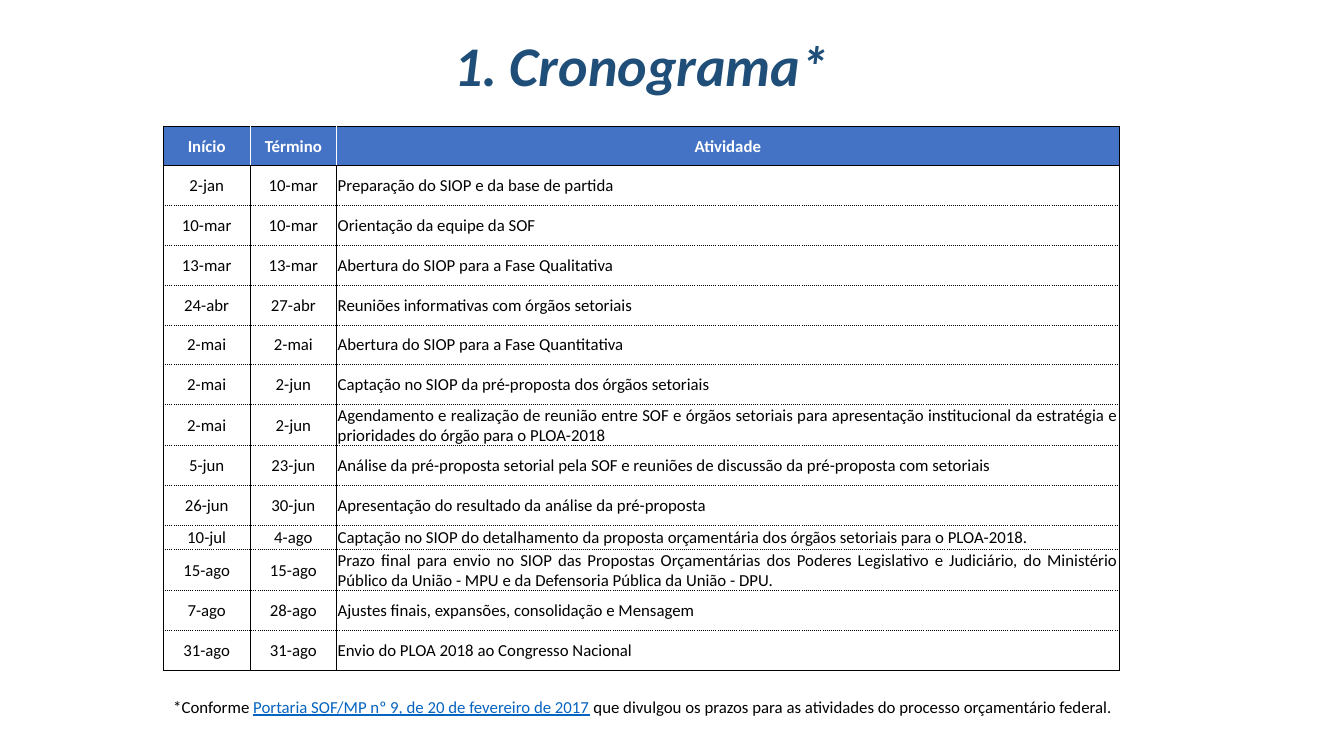
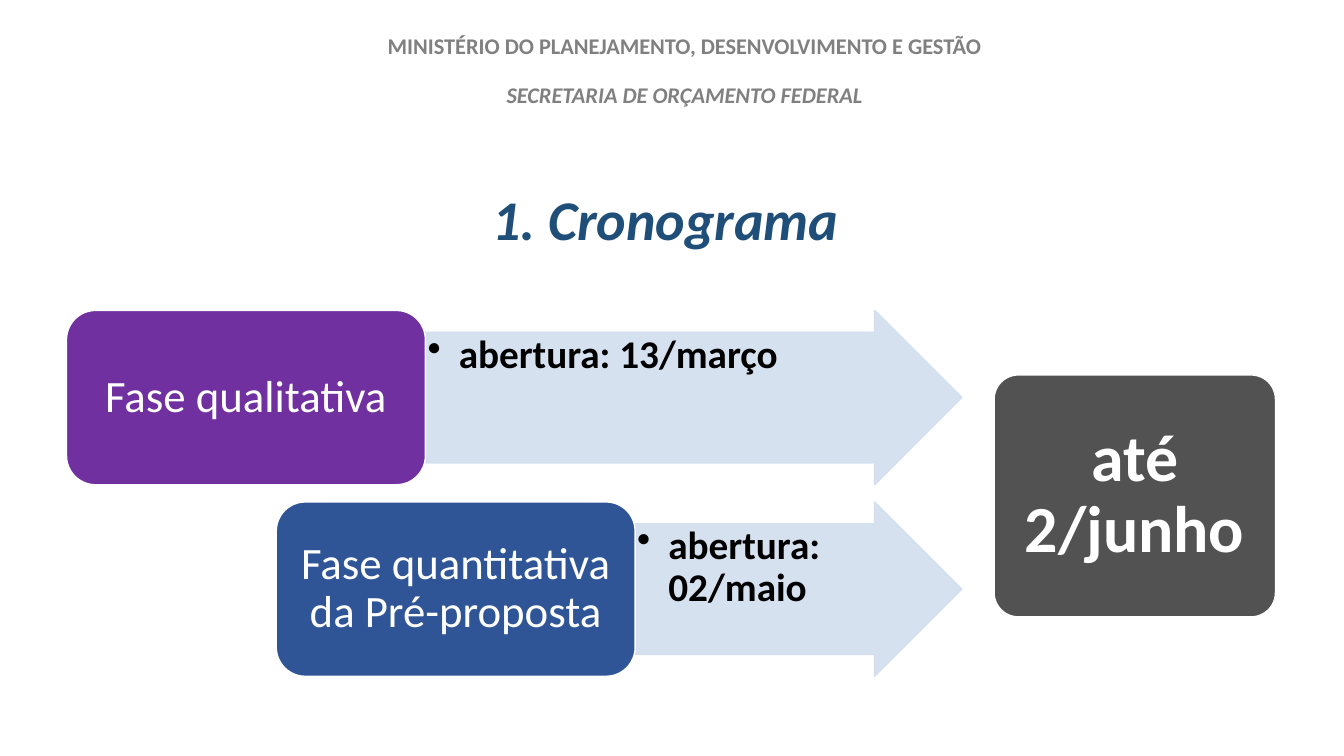
from dataclasses import dataclass
from typing import NamedTuple

from lxml.etree import SubElement
from pptx import Presentation
from pptx.dml.color import RGBColor
from pptx.enum.shapes import MSO_SHAPE
from pptx.enum.text import MSO_ANCHOR, PP_ALIGN
from pptx.oxml import parse_xml
from pptx.oxml.ns import nsdecls, qn
from pptx.util import Inches, Pt


@dataclass(frozen=True)
class Theme:
    font: str = "Calibri"
    title: str = "1F4E79"
    ministry: str = "808080"
    header: str = "4472C4"
    link: str = "0563C1"
    arrow: str = "D2DEEF"
    qualitative: str = "7030A0"
    quantitative: str = "2F5597"
    deadline: str = "525252"
    black: str = "000000"
    white: str = "FFFFFF"
    title_size: int = 40
    ministry_size: int = 16
    small_size: int = 12
    opening_size: int = 28
    phase_size: int = 32
    deadline_size: int = 47


THEME = Theme()


class Area(NamedTuple):
    left: float
    top: float
    width: float
    height: float

    def lengths(self) -> list:
        return [Inches(value) for value in self]


class TextStyle(NamedTuple):
    size: int
    color: str
    bold: bool = False
    italic: bool = False
    align: PP_ALIGN = PP_ALIGN.CENTER
    line_spacing: float = 0.9


class Margins(NamedTuple):
    left: float
    top: float
    right: float
    bottom: float


class Activity(NamedTuple):
    start: str
    end: str
    name: str
    height: float | None = None


class Phase(NamedTuple):
    name: str
    opening: str
    left: float
    top: float
    color: str


class Border(NamedTuple):
    color: str = THEME.black
    width: float = 0.5
    dash: str = "solid"


TITLE = TextStyle(THEME.title_size, THEME.title, bold=True, italic=True)
MINISTRY = TextStyle(THEME.ministry_size, THEME.ministry, bold=True)
HEADER = TextStyle(THEME.small_size, THEME.white, bold=True, line_spacing=1)
DATE = TextStyle(THEME.small_size, THEME.black, line_spacing=1)
ACTIVITY = DATE._replace(align=PP_ALIGN.JUSTIFY)
FOOTNOTE = DATE._replace(align=PP_ALIGN.LEFT)
OPENING = TextStyle(THEME.opening_size, THEME.black, bold=True, align=PP_ALIGN.LEFT)
PHASE = TextStyle(THEME.phase_size, THEME.white)
DEADLINE = TextStyle(THEME.deadline_size, THEME.white, bold=True)

LINE = Border()
DIVIDER = Border(THEME.white)
DOTS = Border(dash="dot")
LAST_LINE = Border(width=1)

TABLE_AREA = Area(1.62, 1.25, 9.48, 5.4)
COLUMN_WIDTHS = (0.86, 0.86, 7.76)
HEADINGS = ("Início", "Término", "Atividade")
TWO_LINES = 0.41
ACTIVITIES = (
    Activity("2-jan", "10-mar", "Preparação do SIOP e da base de partida"),
    Activity("10-mar", "10-mar", "Orientação da equipe da SOF"),
    Activity("13-mar", "13-mar", "Abertura do SIOP para a Fase Qualitativa"),
    Activity("24-abr", "27-abr", "Reuniões informativas com órgãos setoriais"),
    Activity("2-mai", "2-mai", "Abertura do SIOP para a Fase Quantitativa"),
    Activity("2-mai", "2-jun", "Captação no SIOP da pré-proposta dos órgãos setoriais"),
    Activity("2-mai", "2-jun", "Agendamento e realização de reunião entre SOF e órgãos setoriais para "
             "apresentação institucional da estratégia e prioridades do órgão para o PLOA-2018", TWO_LINES),
    Activity("5-jun", "23-jun", "Análise da pré-proposta setorial pela SOF e reuniões de discussão "
             "da pré-proposta com setoriais"),
    Activity("26-jun", "30-jun", "Apresentação do resultado da análise da pré-proposta"),
    Activity("10-jul", "4-ago", "Captação no SIOP do detalhamento da proposta orçamentária dos órgãos "
             "setoriais para o PLOA-2018.", 0.24),
    Activity("15-ago", "15-ago", "Prazo final para envio no SIOP das Propostas Orçamentárias dos Poderes "
             "Legislativo e Judiciário, do Ministério Público da União - MPU e da Defensoria Pública "
             "da União - DPU.", TWO_LINES),
    Activity("7-ago", "28-ago", "Ajustes finais, expansões, consolidação e Mensagem"),
    Activity("31-ago", "31-ago", "Envio do PLOA 2018 ao Congresso Nacional"),
)

PHASES = (
    Phase("Fase qualitativa", "abertura: 13/março", 0.66, 3.08, THEME.qualitative),
    Phase("Fase quantitativa da Pré-proposta", "abertura: 02/maio", 2.74, 4.98, THEME.quantitative),
)
PHASE_WIDTH, PHASE_HEIGHT = 3.56, 1.73
ARROW_END = 9.54


def rgb(color: str) -> RGBColor:
    return RGBColor.from_string(color)


def style_para(para, style: TextStyle) -> None:
    para.alignment = style.align
    para.line_spacing = style.line_spacing
    font = para.font
    font.name, font.size = THEME.font, Pt(style.size)
    font.bold, font.italic = style.bold, style.italic
    font.color.rgb = rgb(style.color)


def set_margins(target, margins: Margins) -> None:
    """Set the inner margins of a text frame or a table cell."""
    target.margin_left, target.margin_top = Inches(margins.left), Inches(margins.top)
    target.margin_right, target.margin_bottom = Inches(margins.right), Inches(margins.bottom)


def add_text(page, area: Area, text: str, style: TextStyle, anchor=MSO_ANCHOR.BOTTOM):
    frame = page.shapes.add_textbox(*area.lengths()).text_frame
    frame.word_wrap = True
    frame.vertical_anchor = anchor
    para = frame.paragraphs[0]
    para.text = text
    style_para(para, style)
    return frame


def add_box(page, kind: MSO_SHAPE, area: Area, fill: str, outline: str,
            text: str, style: TextStyle, margins: Margins):
    box = page.shapes.add_shape(kind, *area.lengths())
    box.shadow.inherit = False
    box.fill.solid()
    box.fill.fore_color.rgb = rgb(fill)
    box.line.color.rgb = rgb(outline)
    box.line.width = Pt(1)
    frame = box.text_frame
    frame.word_wrap = True
    frame.vertical_anchor = MSO_ANCHOR.MIDDLE
    set_margins(frame, margins)
    frame.paragraphs[0].text = text
    style_para(frame.paragraphs[0], style)
    return box


def add_bullet(para, indent: float) -> None:
    properties = para._p.get_or_add_pPr()
    properties.set("marL", str(Inches(indent)))
    properties.set("indent", str(-Inches(indent)))
    properties.insert_element_before(
        parse_xml(f'<a:buChar {nsdecls("a")} char="•"/>'), "a:tabLst", "a:defRPr", "a:extLst")


def set_opacity(shape, percent: int) -> None:
    for color in shape._element.spPr.iter(qn("a:srgbClr")):
        SubElement(color, qn("a:alpha"), val=str(percent * 1000))


def set_borders(cell, left: Border, right: Border, top: Border, bottom: Border) -> None:
    properties = cell._tc.get_or_add_tcPr()
    for index, (side, border) in enumerate(zip("LRTB", (left, right, top, bottom))):
        properties.insert(index, parse_xml(
            f'<a:ln{side} {nsdecls("a")} w="{Pt(border.width)}">'
            f'<a:solidFill><a:srgbClr val="{border.color}"/></a:solidFill>'
            f'<a:prstDash val="{border.dash}"/></a:ln{side}>'))


def fill_cell(cell, text: str, style: TextStyle) -> None:
    cell.vertical_anchor = MSO_ANCHOR.MIDDLE
    set_margins(cell, Margins(0.01, 0.01, 0.01, 0))
    para = cell.text_frame.paragraphs[0]
    para.text = text
    style_para(para, style)


def add_schedule(page) -> None:
    table = page.shapes.add_table(
        len(ACTIVITIES) + 1, len(HEADINGS), *TABLE_AREA.lengths()).table
    table.first_row = table.horz_banding = False
    for column, width in zip(table.columns, COLUMN_WIDTHS):
        column.width = Inches(width)

    fixed = [activity.height for activity in ACTIVITIES if activity.height]
    usual_height = (TABLE_AREA.height - sum(fixed)) / (len(ACTIVITIES) + 1 - len(fixed))
    table.rows[0].height = Inches(usual_height)
    last_column = len(HEADINGS) - 1
    for index, heading in enumerate(HEADINGS):
        cell = table.cell(0, index)
        fill_cell(cell, heading, HEADER)
        cell.fill.solid()
        cell.fill.fore_color.rgb = rgb(THEME.header)
        set_borders(cell, DIVIDER if index else LINE,
                    LINE if index == last_column else DIVIDER, LINE, LINE)

    for row, activity in enumerate(ACTIVITIES, start=1):
        table.rows[row].height = Inches(activity.height or usual_height)
        top = LINE if row == 1 else DOTS
        bottom = LAST_LINE if row == len(ACTIVITIES) else DOTS
        for index, text in enumerate((activity.start, activity.end, activity.name)):
            cell = table.cell(row, index)
            fill_cell(cell, text, ACTIVITY if index == last_column else DATE)
            cell.fill.background()
            set_borders(cell, LINE, LINE, top, bottom)


def add_footnote(page) -> None:
    frame = add_text(page, Area(1.62, 6.86, 10.13, 0.3), "*Conforme ", FOOTNOTE, MSO_ANCHOR.TOP)
    para = frame.paragraphs[0]
    reference = para.add_run()
    reference.text = "Portaria SOF/MP nº 9, de 20 de fevereiro de 2017"
    reference.font.underline = True
    reference.font.color.rgb = rgb(THEME.link)
    para.add_run().text = " que divulgou os prazos para as atividades do processo orçamentário federal."


def add_ministry(page) -> None:
    frame = add_text(page, Area(1.79, 0.25, 10, 0.87),
                     "MINISTÉRIO DO PLANEJAMENTO, DESENVOLVIMENTO E GESTÃO", MINISTRY)
    para = frame.add_paragraph()
    para.text = "SECRETARIA DE ORÇAMENTO FEDERAL"
    para.space_before = Pt(17.5)
    style_para(para, MINISTRY._replace(italic=True))


def add_phase(page, phase: Phase) -> None:
    arrow_left = phase.left + PHASE_WIDTH
    arrow = add_box(page, MSO_SHAPE.RIGHT_ARROW,
                    Area(arrow_left, phase.top, ARROW_END - arrow_left, PHASE_HEIGHT),
                    THEME.arrow, THEME.arrow, phase.opening, OPENING, Margins(0.02, 0.02, 0.45, 0.02))
    arrow.adjustments[0] = 0.75
    arrow.text_frame.vertical_anchor = MSO_ANCHOR.TOP
    add_bullet(arrow.text_frame.paragraphs[0], 0.31)
    set_opacity(arrow, 90)
    add_box(page, MSO_SHAPE.ROUNDED_RECTANGLE,
            Area(phase.left, phase.top, PHASE_WIDTH, PHASE_HEIGHT), phase.color, THEME.white,
            phase.name, PHASE, Margins(0.13, 0.07, 0.13, 0.07))


def build_schedule_page(page) -> None:
    add_text(page, Area(2.11, 0, 8.5, 1.03), "1. Cronograma*", TITLE)
    add_schedule(page)
    add_footnote(page)


def build_phases_page(page) -> None:
    add_text(page, Area(1.9, 1.12, 9.4, 1.44), "1. Cronograma", TITLE)
    add_ministry(page)
    for phase in PHASES:
        add_phase(page, phase)
    deadline = add_box(page, MSO_SHAPE.ROUNDED_RECTANGLE, Area(9.86, 3.72, 2.79, 2.4),
                       THEME.deadline, THEME.white, "até 2/junho", DEADLINE, Margins(0.2, 0.2, 0.2, 0.2))
    deadline.adjustments[0] = 0.1


def main() -> None:
    deck = Presentation()
    deck.slide_width, deck.slide_height = Inches(13.33), Inches(7.5)
    blank = deck.slide_layouts[6]
    for build_page in (build_schedule_page, build_phases_page):
        build_page(deck.slides.add_slide(blank))
    deck.save("out.pptx")


if __name__ == "__main__":
    main()
